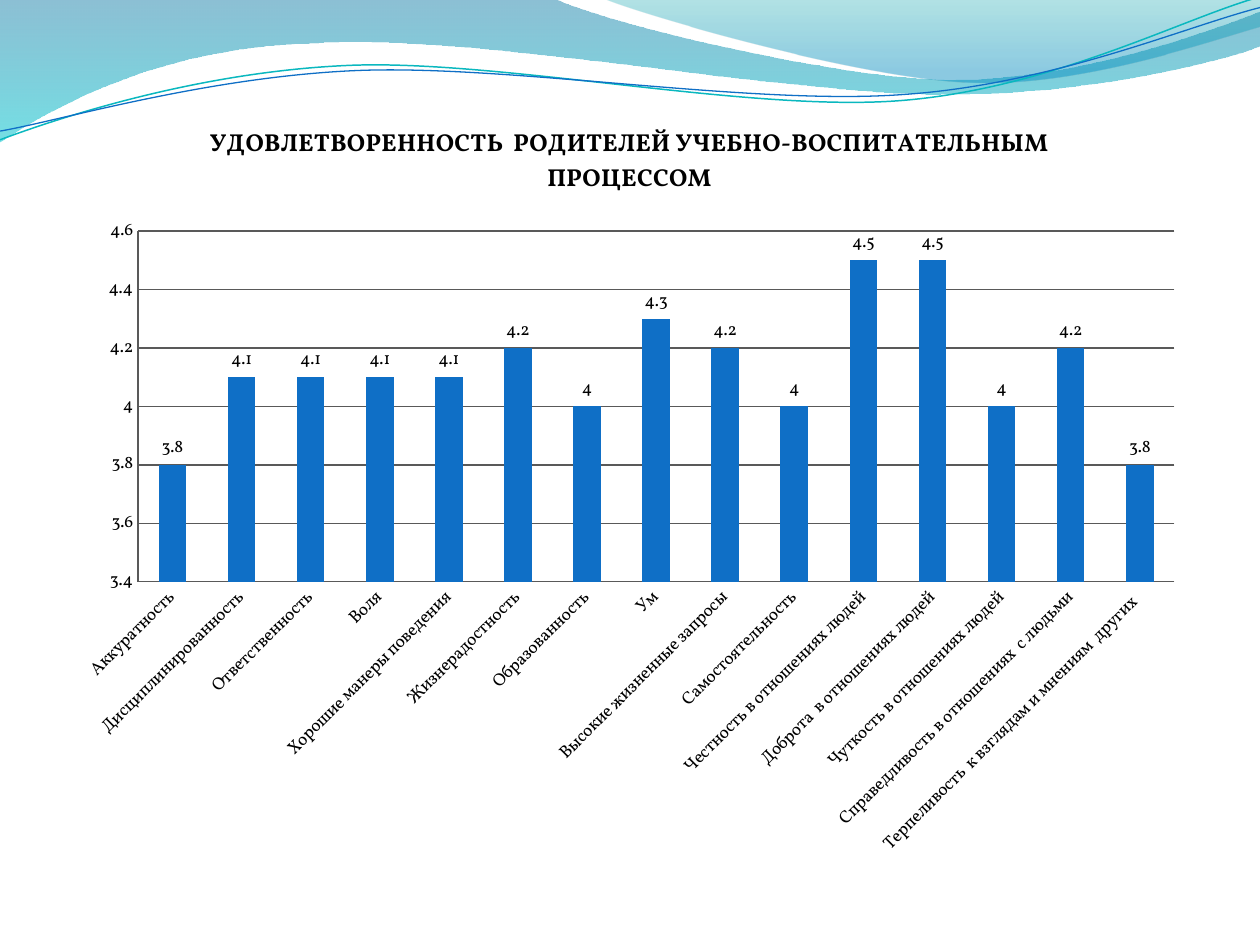
from lxml import etree
from pptx import Presentation
from pptx.chart.data import CategoryChartData
from pptx.dml.color import RGBColor
from pptx.enum.chart import XL_CHART_TYPE, XL_LABEL_POSITION, XL_TICK_MARK
from pptx.oxml.ns import qn
from pptx.util import Pt

COLUMN = XL_CHART_TYPE.COLUMN_CLUSTERED
OUTSIDE = XL_LABEL_POSITION.OUTSIDE_END
NO_TICK = XL_TICK_MARK.NONE
BLACK = RGBColor(0, 0, 0)
GRAY = RGBColor(0x59, 0x59, 0x59)
BLUE = RGBColor(0x0F, 0x6F, 0xC6)
TEAL = RGBColor(0x0A, 0xB8, 0xBF)
FONT = "Vollkorn"

TITLE = "УДОВЛЕТВОРЕННОСТЬ  РОДИТЕЛЕЙ УЧЕБНО-ВОСПИТАТЕЛЬНЫМ ПРОЦЕССОМ"
SCORES = [
    ("Аккуратность", 3.8),
    ("Дисциплинированность", 4.1),
    ("Ответственность", 4.1),
    ("Воля", 4.1),
    ("Хорошие манеры поведения", 4.1),
    ("Жизнерадостность", 4.2),
    ("Образованность", 4),
    ("Ум", 4.3),
    ("Высокие жизненные запросы", 4.2),
    ("Самостоятельность", 4),
    ("Честность в отношениях людей", 4.5),
    ("Доброта  в отношениях людей", 4.5),
    ("Чуткость в отношениях людей", 4),
    ("Справедливость в отношениях  с людьми", 4.2),
    ("Терпеливость  к взглядам и мнениям  других  ", 3.8),
]

# Chart frame on the slide; title and plot area inside the chart
FRAME = (36, 56, 648, 442)
HEAD = (81.4, 13.1)
PLOT = (42.8, 76.1, 592.3, 200.4)

# Outlines in points: a pair is a corner, six numbers are a Bezier curve.
# Gradient stops: position, colour, opacity in percent.
WAVES = [
    ([(0, 0), (316.8, -0.7),
      (342.7, 12.2, 478.1, 45.4, 545.8, 45.4),
      (614.2, 45.4, 689.8, 18.7, 720, 6.5),
      (720.7, 25.9),
      (709.2, 31.7, 626.4, 54.7, 537.1, 54),
      (447.8, 54, 275, 20.2, 185, 24.5),
      (92.9, 25.9, 33.1, 59.8, -0.7, 81.4)],
     [(0, RGBColor(0, 0x74, 0xA1), 45), (1, RGBColor(0, 0xC6, 0xCF), 55)]),
    ([(344.9, -0.7),
      (366.5, 8.6, 491, 44.6, 553.7, 46.8),
      (616.3, 49.7, 691.9, 23, 720, 15.1),
      (720, 0)],
     [(0, RGBColor(0, 0xA1, 0xA9), 30), (0.8, RGBColor(0, 0x8B, 0xBF), 45)]),
]
STRANDS = [
    ([(0, 79.9),
      (34.6, 67, 113.8, 41, 199.4, 37.4),
      (284.4, 33.8, 427, 64.1, 513.4, 57.6),
      (599.8, 51.1, 675.4, 10.8, 718.6, -1.4)], TEAL, 0.85),
    ([(0, 74.9),
      (33.8, 69.1, 118.1, 43.9, 203.8, 40.3),
      (290.2, 36.7, 429.8, 60.5, 516.2, 54),
      (601.9, 48.2, 677.5, 15.1, 720, 4.3)], BLUE, 0.75),
]


def outline(slide, steps, close):
    """Draw through all the points, then join each curve's three into one."""
    dots = [(Pt(step[i]), Pt(step[i + 1]))
            for step in steps for i in range(0, len(step), 2)]
    pen = slide.shapes.build_freeform(*dots[0], scale=1.0)
    pen.add_line_segments(dots[1:], close=close)
    shape = pen.convert_to_shape()
    shape.shadow.inherit = False
    legs = iter(list(shape.element.iter(qn("a:lnTo"))))
    for step in steps[1:]:
        leg = next(legs)
        if len(step) == 6:
            curve = etree.Element(qn("a:cubicBezTo"))
            leg.addprevious(curve)
            for part in (leg, next(legs), next(legs)):
                curve.append(part[0])
                part.getparent().remove(part)
    return shape


def place(node, index, box, **modes):
    """Give a chart part a manual layout, as fractions of the chart."""
    for old in node.findall(qn("c:layout")):
        node.remove(old)
    layout = etree.Element(qn("c:layout"))
    manual = etree.SubElement(layout, qn("c:manualLayout"))
    shares = [size / FRAME[2 + i % 2] for i, size in enumerate(box)]
    parts = {**modes, "xMode": "edge", "yMode": "edge", **dict(zip("xywh", shares))}
    for name, value in parts.items():
        etree.SubElement(manual, qn("c:" + name)).set("val", str(value))
    node.insert(index, layout)


def style(font, size, bold=False):
    font.name, font.size, font.bold = FONT, Pt(size), bold
    font.color.rgb = BLACK


deck = Presentation()
deck.slide_width, deck.slide_height = Pt(720), Pt(540)
slide = deck.slides.add_slide(deck.slide_layouts[6])

# Waves along the top
for steps, stops in WAVES:
    wave = outline(slide, steps, True)
    wave.line.fill.background()
    wave.fill.gradient()
    wave.fill.gradient_angle = 270
    for stop, (pos, color, alpha) in zip(wave.fill.gradient_stops, stops):
        stop.position = pos
        stop.color.rgb = color
    tints = wave.element.spPr.iter(qn("a:srgbClr"))
    for tint, (pos, color, alpha) in zip(tints, stops):
        etree.SubElement(tint, qn("a:alpha")).set("val", str(alpha * 1000))

for steps, color, width in STRANDS:
    strand = outline(slide, steps, False)
    strand.fill.background()
    strand.line.color.rgb = color
    strand.line.width = Pt(width)

# Column chart
data = CategoryChartData()
data.categories = [name for name, score in SCORES]
data.add_series("Series 1", [score for name, score in SCORES])
chart = slide.shapes.add_chart(COLUMN, *map(Pt, FRAME), data).chart
style(chart.font, 10)
chart.has_legend = False
chart.has_title = True
chart.chart_title.text_frame.text = TITLE
style(chart.chart_title.text_frame.paragraphs[0].runs[0].font, 14, True)

plot = chart.plots[0]
plot.gap_width = 150
plot.vary_by_categories = False
bars = plot.series[0].format.fill
bars.solid()
bars.fore_color.rgb = BLUE
plot.has_data_labels = True
labels = plot.data_labels
labels.show_value = True
labels.position = OUTSIDE
style(labels.font, 10)

# Axes
scale = chart.value_axis
scale.minimum_scale, scale.maximum_scale, scale.major_unit = 3.4, 4.6, 0.2
scale.has_major_gridlines = True
for line in (scale.major_gridlines.format.line, scale.format.line,
             chart.category_axis.format.line):
    line.color.rgb = GRAY
    line.width = Pt(0.75)
for axis in (scale, chart.category_axis):
    axis.major_tick_mark = axis.minor_tick_mark = NO_TICK
    style(axis.tick_labels.font, 10)
body = chart.element.xpath(".//c:catAx/c:txPr/a:bodyPr")[0]
body.set("rot", "-2700000")
body.set("vert", "horz")

# Positions inside the chart
place(chart.element.xpath("c:chart/c:title")[0], 1, HEAD)
place(chart.element.xpath(".//c:plotArea")[0], 0, PLOT, layoutTarget="inner")

deck.save("out.pptx")
